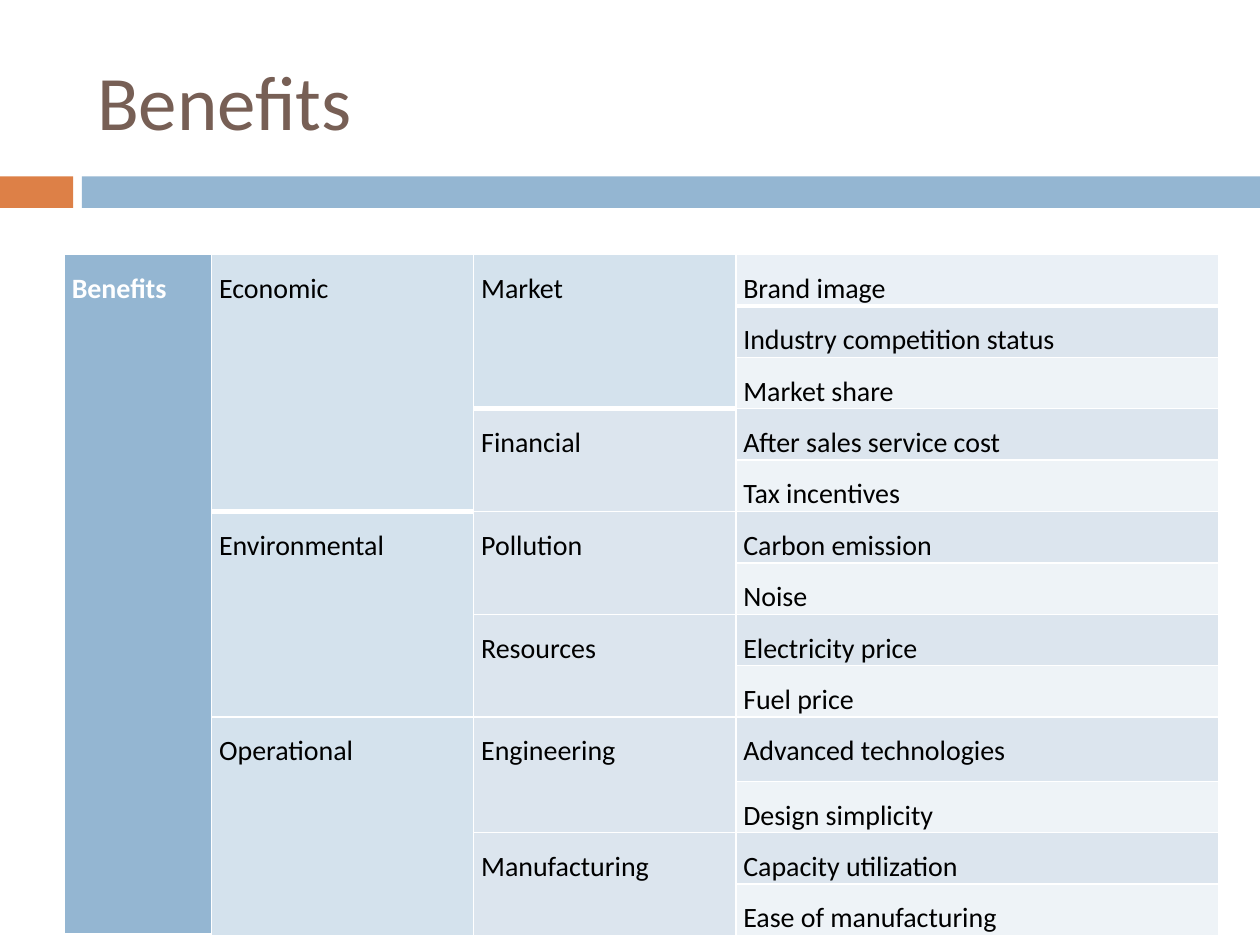
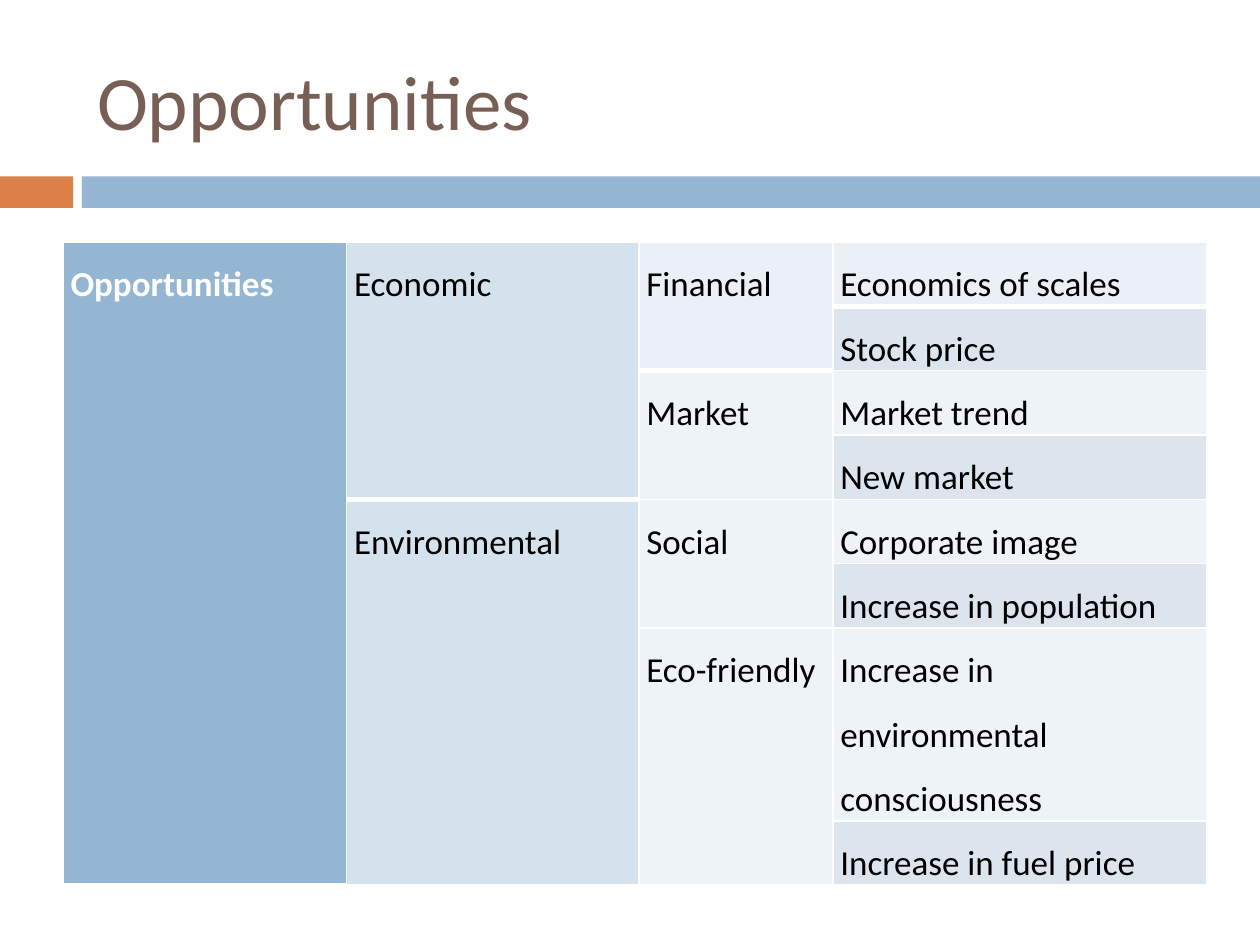
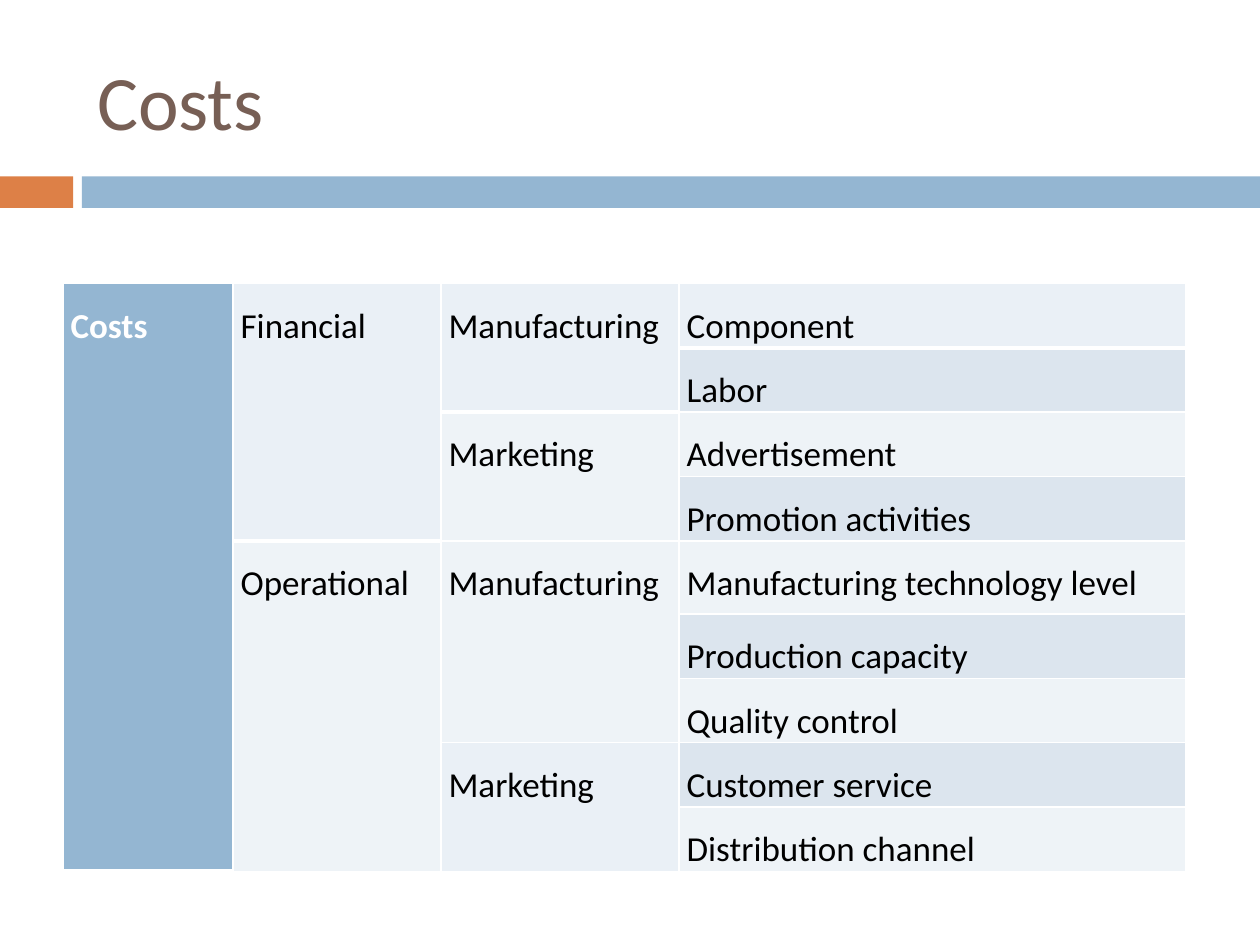
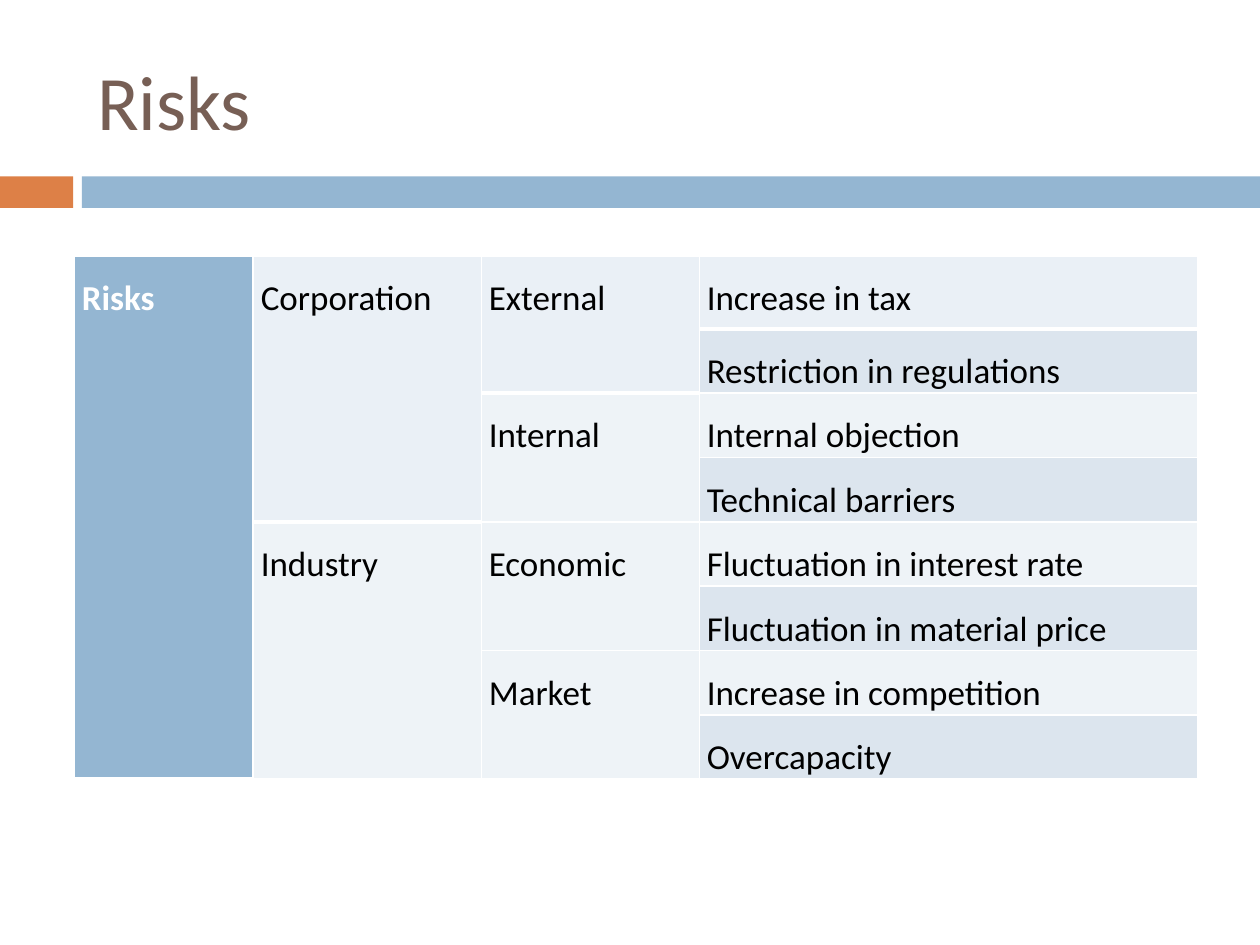
"""Build four slides that break benefits, opportunities, costs and risks into tables."""
from lxml import etree
from pptx import Presentation
from pptx.dml.color import RGBColor
from pptx.enum.shapes import MSO_SHAPE
from pptx.enum.text import MSO_ANCHOR, PP_ALIGN
from pptx.oxml.ns import qn
from pptx.util import Inches, Pt

RECTANGLE = MSO_SHAPE.RECTANGLE
MIDDLE = MSO_ANCHOR.MIDDLE
LEFT = PP_ALIGN.LEFT

WHITE = RGBColor(0xFF, 0xFF, 0xFF)
BLACK = RGBColor(0x00, 0x00, 0x00)
BROWN = RGBColor(0x77, 0x5F, 0x55)
ORANGE = RGBColor(0xDD, 0x80, 0x47)
BLUE = RGBColor(0x94, 0xB6, 0xD2)
ACCENT = RGBColor(0xD4, 0xE2, 0xED)
TOP_ROW = RGBColor(0xEA, 0xF0, 0xF6)
ODD_ROW = RGBColor(0xDC, 0xE5, 0xEE)
EVEN_ROW = RGBColor(0xEE, 0xF3, 0xF7)
FONT = "Calibri"

PAGES = [
    {
        "title": "Benefits", "size": 16, "corner": (0.51, 2.02),
        "columns": [1.17, 2.08, 2.08, 3.83],
        "rows": [0.39] * 6 + [0.29] + [0.39] * 2 + [0.51] + [0.39] * 3,
        "special_fills": {(0, 1): ACCENT, (5, 1): ACCENT, (9, 1): ACCENT, (0, 2): ACCENT},
        "groups": {
            "Economic": [
                ("Market", ["Brand image", "Industry competition status", "Market share"]),
                ("Financial", ["After sales service cost", "Tax incentives"]),
            ],
            "Environmental": [
                ("Pollution", ["Carbon emission", "Noise"]),
                ("Resources", ["Electricity price", "Fuel price"]),
            ],
            "Operational": [
                ("Engineering", ["Advanced technologies", "Design simplicity"]),
                ("Manufacturing", ["Capacity utilization", "Ease of manufacturing"]),
            ],
        },
    },
    {
        "title": "Opportunities", "size": 20, "corner": (0.5, 1.92),
        "columns": [2.25, 2.32, 1.54, 2.97],
        "rows": [0.43] + [0.5] * 5 + [1, 0.5],
        "special_fills": {(0, 1): ACCENT, (4, 1): ACCENT},
        "groups": {
            "Economic": [
                ("Financial", ["Economics of scales", "Stock price"]),
                ("Market", ["Market trend", "New market"]),
            ],
            "Environmental": [
                ("Social", ["Corporate image", "Increase in population"]),
                ("Eco-friendly", ["Increase in environmental consciousness",
                                  "Increase in fuel price"]),
            ],
        },
    },
    {
        "title": "Costs", "size": 20, "corner": (0.5, 2.25),
        "columns": [1.35, 1.65, 1.89, 4.02],
        "rows": [0.42] * 4 + [0.58] + [0.42] * 4,
        "special_fills": {(7, 2): TOP_ROW},
        "groups": {
            "Financial": [
                ("Manufacturing", ["Component", "Labor"]),
                ("Marketing", ["Advertisement", "Promotion activities"]),
            ],
            "Operational": [
                ("Manufacturing", ["Manufacturing technology level", "Production capacity",
                                   "Quality control"]),
                ("Marketing", ["Customer service", "Distribution channel"]),
            ],
        },
    },
    {
        "title": "Risks", "size": 20, "corner": (0.59, 2.03),
        "columns": [1.42, 1.81, 1.73, 3.96],
        "rows": [0.58] + [0.47] * 7,
        "special_fills": {},
        "groups": {
            "Corporation": [
                ("External", ["Increase in tax", "Restriction in regulations"]),
                ("Internal", ["Internal objection", "Technical barriers"]),
            ],
            "Industry": [
                ("Economic", ["Fluctuation in interest rate", "Fluctuation in material price"]),
                ("Market", ["Increase in competition", "Overcapacity"]),
            ],
        },
    },
]


def style_text(frame, size, color, bold=False):
    para = frame.paragraphs[0]
    para.alignment = LEFT
    font = para.runs[0].font
    font.name, font.size, font.bold = FONT, Pt(size), bold
    font.color.rgb = color
    return para


def add_border(cell, side, width):
    line = etree.SubElement(cell._tc.get_or_add_tcPr(), qn(f"a:ln{side}"), w=str(Pt(width)))
    fill = etree.SubElement(line, qn("a:solidFill"))
    etree.SubElement(fill, qn("a:srgbClr"), val=str(WHITE))


deck = Presentation()
deck.slide_width, deck.slide_height = Inches(10), Inches(7.5)
layout = deck.slide_layouts[5]
slides = [deck.slides.add_slide(layout) for page in PAGES]

for left, width, color in [(0, 0.58, ORANGE), (0.65, 9.35, BLUE)]:
    band = slides[0].shapes.add_shape(
        RECTANGLE, Inches(left), Inches(1.4), Inches(width), Inches(0.25))
    band.shadow.inherit = False
    band.fill.solid()
    band.fill.fore_color.rgb = color
    band.line.fill.background()
    layout.shapes.element.append(band.element)

for slide, page in zip(slides, PAGES):
    title = slide.shapes.title
    title.left, title.top = Inches(0.67), Inches(0.25)
    title.width, title.height = Inches(8.92), Inches(1.08)
    title.text_frame.text = page["title"]
    title.text_frame.vertical_anchor = MIDDLE
    style_text(title.text_frame, 44, BROWN)

    left, top = page["corner"]
    widths, heights = page["columns"], page["rows"]
    table = slide.shapes.add_table(
        len(heights), len(widths), Inches(left), Inches(top),
        Inches(sum(widths)), Inches(sum(heights))).table
    for column, width in zip(table.columns, widths):
        column.width = Inches(width)
    for row, height in zip(table.rows, heights):
        row.height = Inches(height)

    entries = [(0, 0, len(heights), page["title"])]
    row = 0
    for group, subgroups in page["groups"].items():
        entries.append((row, 1, sum(len(items) for name, items in subgroups), group))
        for name, items in subgroups:
            entries.append((row, 2, len(items), name))
            for item in items:
                entries.append((row, 3, 1, item))
                row += 1

    for row, column, span, text in entries:
        cell = table.cell(row, column)
        if span > 1:
            cell.merge(table.cell(row + span - 1, column))
        cell.margin_left = cell.margin_right = Inches(0.06)
        cell.margin_top = cell.margin_bottom = 0
        add_border(cell, "L", 1)
        add_border(cell, "R", 1)
        if row == 0:
            add_border(cell, "T", 1)
        add_border(cell, "B", 3 if row == 0 else 1)

        band_color = TOP_ROW if row == 0 else ODD_ROW if row % 2 else EVEN_ROW
        cell.fill.solid()
        cell.fill.fore_color.rgb = (
            BLUE if column == 0 else page["special_fills"].get((row, column), band_color))
        cell.text_frame.text = text
        para = style_text(
            cell.text_frame, page["size"], WHITE if column == 0 else BLACK, column == 0)
        para.line_spacing = 1.5

deck.save("out.pptx")
